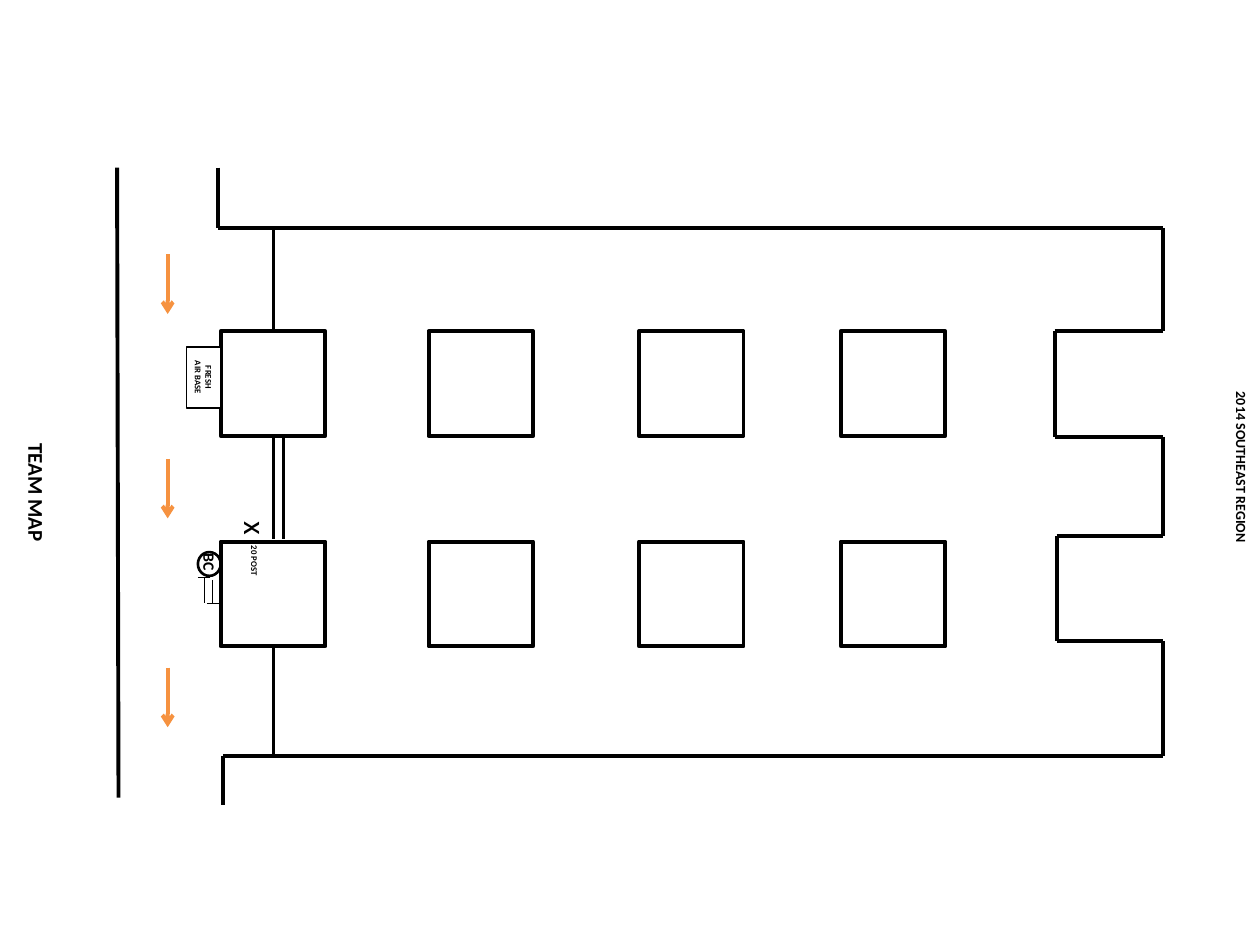
from lxml import etree
from pptx import Presentation
from pptx import util as u
from pptx.dml.color import RGBColor
from pptx.enum import shapes, text
from pptx.oxml import ns

HUES = {"ink": "000000", "paper": "FFFFFF", "flow": "F69240"}
FONT = "Calibri"


def hue(name):
    return RGBColor.from_string(HUES[name])


def line(slide, box, start, end, width=2.25, color="ink", arrow=False):
    """Draw a line between two points given from the box's corner."""
    left, top = box
    rule = slide.shapes.add_connector(
        shapes.MSO_CONNECTOR.STRAIGHT,
        u.Cm(left + start[0]), u.Cm(top + start[1]),
        u.Cm(left + end[0]), u.Cm(top + end[1]))
    rule.line.width = u.Pt(width)
    rule.line.color.rgb = hue(color)
    if arrow:
        etree.SubElement(rule.line._get_or_add_ln(), ns.qn("a:tailEnd"), type="arrow")
    etree.SubElement(rule._element.spPr, ns.qn("a:effectLst"))


def shape(slide, kind, left, top, width, height, weight, fill=None):
    item = slide.shapes.add_shape(
        kind, u.Cm(left), u.Cm(top), u.Cm(width), u.Cm(height))
    item.shadow.inherit = False
    if fill:
        item.fill.solid()
        item.fill.fore_color.rgb = hue(fill)
    else:
        item.fill.background()
    item.line.width = u.Pt(weight)
    item.line.color.rgb = hue("ink")
    return item


def write(item, words, size, bold=True, wrap=True, align=text.PP_ALIGN.LEFT):
    frame = item.text_frame
    frame.word_wrap = wrap
    frame.auto_size = text.MSO_AUTO_SIZE.SHAPE_TO_FIT_TEXT
    para = frame.paragraphs[0]
    para.alignment = align
    run = para.add_run()
    run.text = words
    run.font.name = FONT
    run.font.size = u.Pt(size)
    run.font.bold = bold
    run.font.color.rgb = hue("ink")


def label(slide, mid, width, height, words, size, **style):
    """Add a text box turned a quarter round its middle point."""
    item = slide.shapes.add_textbox(
        u.Cm(mid[0] - width / 2), u.Cm(mid[1] - height / 2),
        u.Cm(width), u.Cm(height))
    item.rotation = 90
    write(item, words, size, **style)


def pillars(slide, left, top):
    side = 2.11
    for y in (2.08, 6.32):
        for x in (0.06, 4.25, 8.49, 12.56):
            shape(slide, shapes.MSO_SHAPE.RECTANGLE, left + x, top + y,
                  side, side, 2.25, "paper")


def walls(slide, left, top, width, height):
    """Draw the outer walls, with two bays cut into the right side."""
    box = (left, top)
    foot = 0.11
    line(slide, box, (0, 0), (width, 0))
    line(slide, box, (foot, height), (width, height))
    line(slide, box, (0, -1.22), (0, 0))
    line(slide, box, (foot, height), (foot, height + 0.99))
    start = 0
    for x, high, low in ((16.87, 2.08, 4.21), (16.91, 6.2, 8.33)):
        line(slide, box, (width, start), (width, high))
        line(slide, box, (x, high), (width, high))
        line(slide, box, (x, high), (x, low))
        line(slide, box, (x, low), (width, low))
        start = low
    line(slide, box, (width, start), (width, height))


def stops(slide, left, top, height):
    """Draw the thin cross lines between the first pillars."""
    gap = (4.17, 6.27)
    for x, high, low in ((1.12, 0, 2.11), (1.12, *gap),
                         (1.12, 8.43, height), (1.33, *gap)):
        line(slide, (left, top), (x, high), (x, low), 1.5)


def street(slide, left, top, height):
    box = (left, top)
    line(slide, box, (0.03, height), (0, 0))
    for y in (1.75, 5.87, 10.08):
        line(slide, box, (1.02, y), (1.02, y + 1.2), color="flow", arrow=True)


def base(slide, left, top):
    """Add the turned fresh air base sign."""
    wide, high = 1.24, 0.69
    sign = shape(slide, shapes.MSO_SHAPE.RECTANGLE, left + (high - wide) / 2,
                 top + (wide - high) / 2, wide, high, 1, "paper")
    sign.rotation = 90
    write(sign, "FRESH AIR BASE", 5, align=text.PP_ALIGN.CENTER)


def post(slide, left, top):
    """Add the BC mark, its stand and the start point."""
    shape(slide, shapes.MSO_SHAPE.OVAL, left, top, 0.46, 0.48, 1.5)
    label(slide, (left + 0.23, top + 0.36), 1.17, 0.64, "BC", 9)
    for start, end in (((0.13, 0.51), (0.13, 1.02)), ((0.3, 0.56), (0.3, 1.04)),
                       ((0, 0.51), (0.25, 0.51)), ((0.18, 1.04), (0.46, 1.04))):
        line(slide, (left, top), start, end, 0.75)
    label(slide, (left + 1.18, top - 0.59), 0.43, 1.02, "x", 18,
          bold=False, wrap=False)
    label(slide, (left + 1.13, top + 0.57), 1.9, 0.48, "20 POST", 5)


def titles(slide, width):
    label(slide, (0.74, 10.21), 3.05, 0.76, "TEAM MAP", 12)
    label(slide, (width - 0.38, 9.42), 4.88, 0.61, "2014 SOUTHEAST REGION", 8,
          align=text.PP_ALIGN.CENTER)


def main():
    deck = Presentation()
    deck.slide_width, deck.slide_height = u.Cm(25.4), u.Cm(19.05)
    slide = deck.slides.add_slide(deck.slide_layouts[6])
    left, top, width, height = 4.39, 4.6, 19.06, 10.64
    pillars(slide, left, top)
    walls(slide, left, top, width, height)
    stops(slide, left, top, height)
    street(slide, 2.36, 3.38, 12.7)
    titles(slide, 25.4)
    base(slide, 3.76, 6.99)
    post(slide, 3.99, 11.13)
    deck.save("out.pptx")


if __name__ == "__main__":
    main()
